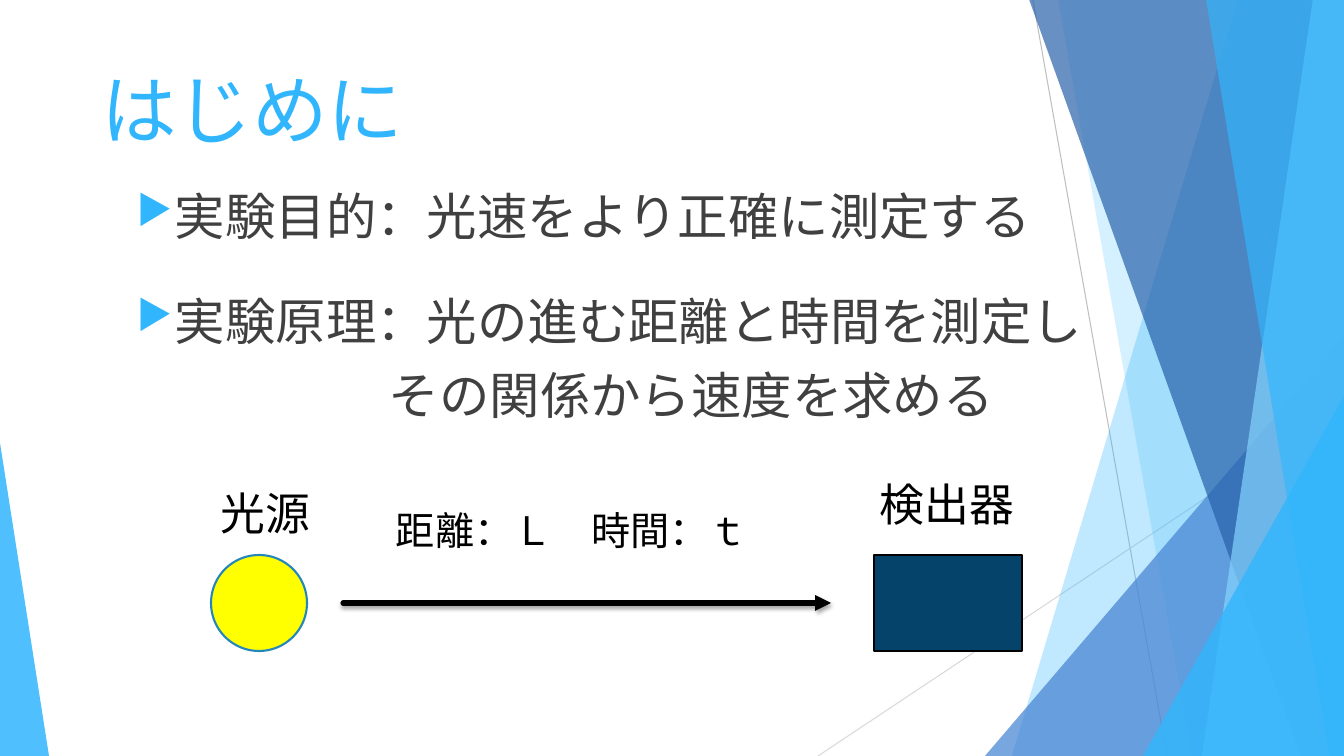
from lxml import etree
from pptx import Presentation
from pptx.dml.color import RGBColor
from pptx.enum.shapes import MSO_CONNECTOR, MSO_SHAPE
from pptx.enum.text import MSO_ANCHOR, MSO_AUTO_SIZE, PP_ALIGN
from pptx.oxml import parse_xml
from pptx.oxml.ns import nsdecls, qn
from pptx.util import Pt

PX = 914400 / 100.8
W, H = 1344, 756
FONT = "Karla"
COLORS = {
    "sky": "31B6FD", "blue": "4584D3", "navy": "2862AA", "pale": "83D3FE",
    "ray": "BFBFBF", "faint_ray": "D9D9D9", "body": "404040", "black": "000000",
    "lamp": "FFFF00", "lamp_edge": "2487BB", "detector": "06436B",
}
RGB = {name: RGBColor.from_string(value) for name, value in COLORS.items()}


def px(*lengths):
    return [round(n * PX) for n in lengths]


def add_run(p, text, size, color):
    r = p.add_run()
    r.text = text
    r.font.size = Pt(size)
    r.font.color.rgb = RGB[color]
    r.font.name = FONT
    etree.SubElement(r.font._element, qn("a:ea"), typeface=FONT)


prs = Presentation()
prs.slide_width, prs.slide_height = px(W, H)
slide = prs.slides.add_slide(prs.slide_layouts[5])
shapes = slide.shapes

# Lines: two thin rays of the backdrop, then the light path
lines = [
    ((1033, 0, 1167, H), "ray", 0.75),
    ((W, 406, 818, H), "faint_ray", 0.75),
    ((343, 603, 831, 603), "black", 3.75),
]
for ends, color, width in lines:
    line = shapes.add_connector(MSO_CONNECTOR.STRAIGHT, *px(*ends))
    line.line.color.rgb = RGB[color]
    line.line.width = Pt(width)
    effects = etree.SubElement(line._element.spPr, qn("a:effectLst"))
light_path = line
ln = light_path.line._get_or_add_ln()
ln.set("cap", "rnd")
etree.SubElement(ln, qn("a:tailEnd"), type="triangle")
effects.append(parse_xml(
    f'<a:outerShdw {nsdecls("a")} blurRad="{Pt(3)}" dist="{Pt(2)}" dir="5400000" rotWithShape="0">'
    '<a:srgbClr val="000000"><a:alpha val="35000"/></a:srgbClr></a:outerShdw>'))

# Translucent facets: a band is (top x, bottom x) running to the right edge,
# a triangle is (left, top, width, apex position)
facets = [
    ("band", (1238, 1012), "sky", 30),
    ("band", (1058, 1192), "sky", 20),
    ("triangle", (985, 336, 359, 1), "blue", 72),
    ("band", (1029, 1301), "navy", 70),
    ("band", (1313, 1202), "pale", 70),
    ("band", (1206, 1329), "sky", 65),
    ("triangle", (1143, 396, 201, 1), "sky", 80),
    ("triangle", (0, 443, 49, 0), "sky", 85),
]
for kind, place, color, opacity in facets:
    if kind == "band":
        top_x, bottom_x = place
        outline = shapes.build_freeform(*px(top_x, -1))
        corners = [(W, -1), (W, H), (bottom_x, H)]
        outline.add_line_segments([px(*c) for c in corners], close=True)
        sp = outline.convert_to_shape()
    else:
        left, top, width, apex = place
        sp = shapes.add_shape(MSO_SHAPE.ISOSCELES_TRIANGLE, *px(left, top, width, H - top))
        sp.adjustments[0] = apex
    sp.shadow.inherit = False
    sp.line.fill.background()
    sp.fill.solid()
    sp.fill.fore_color.rgb = RGB[color]
    tint = sp._element.spPr.find(".//" + qn("a:srgbClr"))
    etree.SubElement(tint, qn("a:alpha"), val=str(opacity * 1000))

# Title, brought in front of the backdrop
title = shapes.title
title.left, title.top, title.width, title.height = px(91, 58, 948, 112)
title.element.getparent().append(title.element)
tf = title.text_frame
tf.vertical_anchor = MSO_ANCHOR.TOP
tf.paragraphs[0].alignment = PP_ALIGN.LEFT
add_run(tf.paragraphs[0], "はじめに", 54, "sky")

# Purpose and principle: text, left margin, hanging indent, line spacing
points = [
    ("実験目的：光速をより正確に測定する", 38, -38, 1.0),
    ("実験原理：光の進む距離と時間を測定し", 38, -38, 1.5),
    ("その関係から速度を求める", 252, 0, 1.0),
]
tf = shapes.add_textbox(*px(127, 180, 989, 276)).text_frame
tf.word_wrap = True
for i, (text, margin, indent, spacing) in enumerate(points):
    p = tf.add_paragraph() if i else tf.paragraphs[0]
    p.space_before = Pt(10)
    p.line_spacing = spacing
    pPr = p._element.get_or_add_pPr()
    pPr.set("marL", str(px(margin)[0]))
    pPr.set("indent", str(px(indent)[0]))
    if indent:
        color = etree.SubElement(pPr, qn("a:buClr"))
        etree.SubElement(color, qn("a:srgbClr"), val=COLORS["sky"])
        etree.SubElement(pPr, qn("a:buSzPct"), val="80000")
        etree.SubElement(pPr, qn("a:buChar"), char="▶")
    add_run(p, text, 36, "body")

# Experiment: lamp, detector and the light between them
devices = [
    (MSO_SHAPE.OVAL, (211, 555, 96, 96), "lamp", "lamp_edge"),
    (MSO_SHAPE.RECTANGLE, (874, 555, 148, 96), "detector", "black"),
]
for kind, box, fill, edge in devices:
    sp = shapes.add_shape(kind, *px(*box))
    sp.shadow.inherit = False
    sp.fill.solid()
    sp.fill.fore_color.rgb = RGB[fill]
    sp.line.color.rgb = RGB[edge]
    sp.line.width = Pt(1.5)
light_path.element.getparent().append(light_path.element)

labels = [
    ("光源", (211, 481, 131, 64), 32),
    ("検出器", (870, 472, 168, 64), 32),
    ("距離：Ｌ　時間：ｔ", (386, 501, 417, 57), 28),
]
for text, box, size in labels:
    tf = shapes.add_textbox(*px(*box)).text_frame
    tf.word_wrap = True
    tf.auto_size = MSO_AUTO_SIZE.SHAPE_TO_FIT_TEXT
    add_run(tf.paragraphs[0], text, size, "black")

prs.save("out.pptx")
